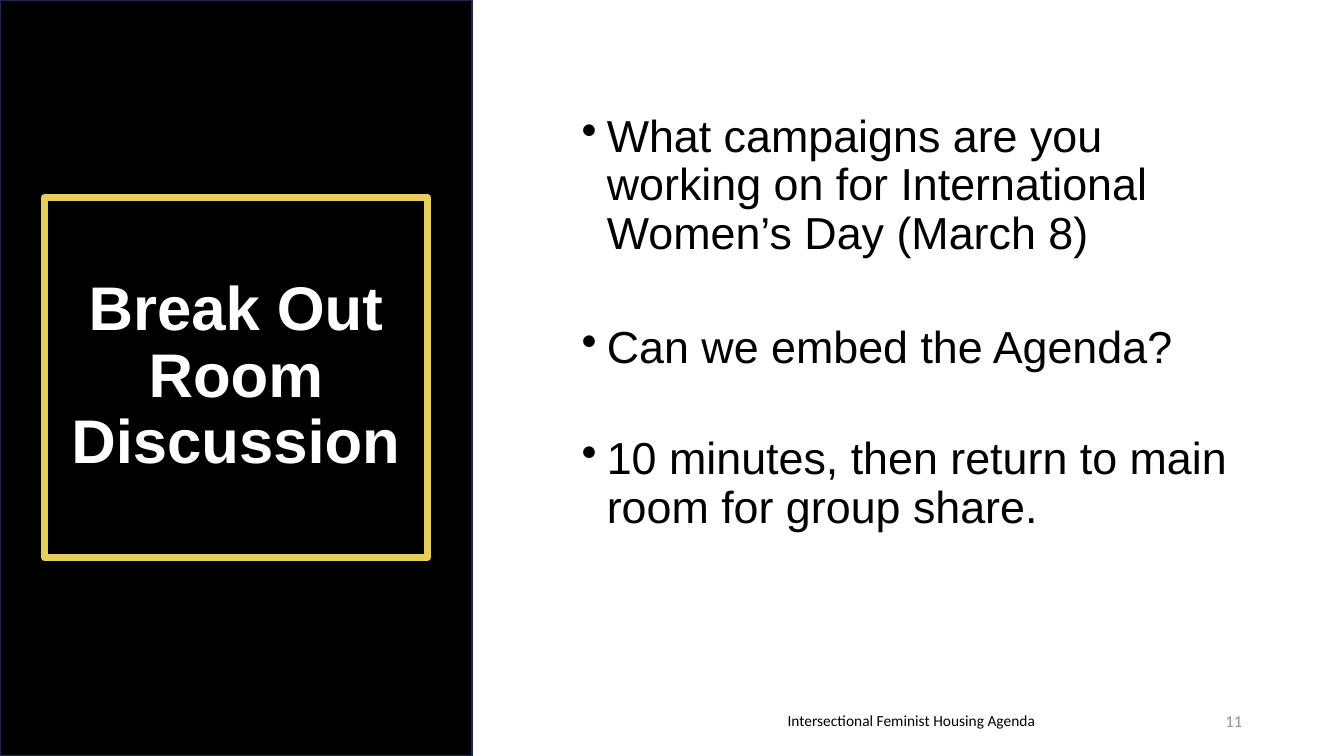
from lxml import etree
from pptx import Presentation
from pptx.dml.color import RGBColor
from pptx.enum.shapes import MSO_SHAPE
from pptx.enum.text import MSO_ANCHOR, PP_ALIGN
from pptx.oxml.ns import qn
from pptx.util import Inches, Pt

RECT = MSO_SHAPE.RECTANGLE
MIDDLE, TOP = MSO_ANCHOR.MIDDLE, MSO_ANCHOR.TOP
LEFT, CENTER, RIGHT = PP_ALIGN.LEFT, PP_ALIGN.CENTER, PP_ALIGN.RIGHT

WIDTH, HEIGHT = 13.33, 7.5
PANEL_WIDTH = 4.68
FOOTER_TOP, FOOTER_HEIGHT = 6.95, 0.4
RIGHT_EDGE = 12.42
BODY_WIDTH, NUMBER_WIDTH = 6.75, 3

QUESTIONS = [
    ("What campaigns are you working on for International Women’s Day (March 8)", 10),
    ("Can we embed the Agenda?", 47),
    ("10 minutes, then return to main room for group share.", 45),
]


def rgb(value):
    return RGBColor.from_string(value)


def add_box(slide, box, line, weight, fill=None):
    sp = slide.shapes.add_shape(RECT, *map(Inches, box))
    sp.shadow.inherit = False
    if fill:
        sp.fill.solid()
        sp.fill.fore_color.rgb = rgb(fill)
    else:
        sp.fill.background()
    sp.line.color.rgb = rgb(line)
    sp.line.width = Pt(weight)
    return sp


def add_text_area(slide, box, anchor):
    tf = slide.shapes.add_textbox(*map(Inches, box)).text_frame
    tf.word_wrap = True
    tf.vertical_anchor = anchor
    return tf


def write(p, text, size, color, font, align, bold=False):
    p.text = text
    p.alignment = align
    p.font.size = Pt(size)
    p.font.name = font
    p.font.bold = bold
    p.font.color.rgb = rgb(color)


def add_bullet(p, indent):
    pPr = p._p.get_or_add_pPr()
    pPr.set("marL", str(Inches(indent)))
    pPr.set("indent", str(-Inches(indent)))
    bullet = etree.Element(qn("a:buChar"), char="•")
    pPr.find(qn("a:defRPr")).addprevious(bullet)


def add_title(slide, text):
    sp = add_box(slide, (0.44, 1.96, 3.8, 3.57), "E7CE5A", 5)
    etree.SubElement(sp.line._ln, qn("a:round"))
    tf = sp.text_frame
    tf.word_wrap = True
    tf.vertical_anchor = MIDDLE
    p = tf.paragraphs[0]
    write(p, text, 44, "FFFFFF", "Arial", CENTER, bold=True)
    p.line_spacing = 0.9


def add_questions(slide, questions):
    tf = add_text_area(slide, (RIGHT_EDGE - BODY_WIDTH, 1.08, BODY_WIDTH, 5.33), TOP)
    for i, (text, gap) in enumerate(questions):
        p = tf.add_paragraph() if i else tf.paragraphs[0]
        write(p, text, 32, "000000", "Arial", LEFT)
        p.line_spacing = 0.9
        p.space_before = Pt(gap)
        add_bullet(p, 0.25)


def add_footer(slide, left, width, text, size, color, align):
    tf = add_text_area(slide, (left, FOOTER_TOP, width, FOOTER_HEIGHT), MIDDLE)
    write(tf.paragraphs[0], text, size, color, "Calibri", align)


def main():
    prs = Presentation()
    prs.slide_width, prs.slide_height = Inches(WIDTH), Inches(HEIGHT)
    slide = prs.slides.add_slide(prs.slide_layouts[6])
    add_questions(slide, QUESTIONS)
    add_footer(slide, 6.79, 4.5, "Intersectional Feminist Housing Agenda", 11, "000000", CENTER)
    add_footer(slide, RIGHT_EDGE - NUMBER_WIDTH, NUMBER_WIDTH, "11", 12, "8E90A5", RIGHT)
    add_box(slide, (0, 0, PANEL_WIDTH, HEIGHT), "1E2654", 1, fill="000000")
    add_title(slide, "Break Out Room Discussion")
    prs.save("out.pptx")


if __name__ == "__main__":
    main()
